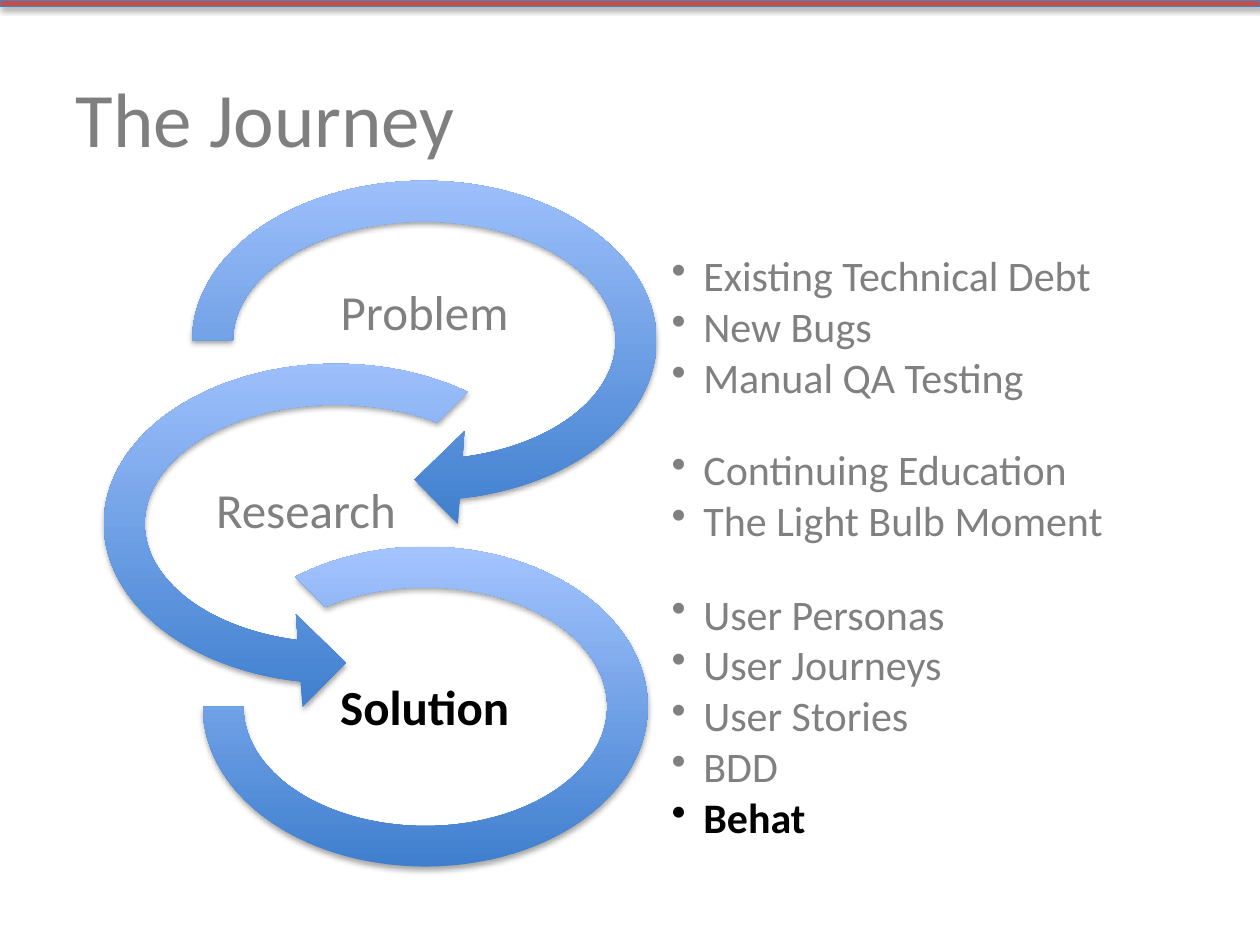
from lxml import etree
from pptx import Presentation
from pptx import util as u
from pptx.dml.color import RGBColor
from pptx.enum import shapes, text
from pptx.oxml import parse_xml
from pptx.oxml.ns import nsdecls, qn

GREY, BLACK = "808080", "000000"
FORM = shapes.MSO_SHAPE


def style(run, size, tone, bold=False):
    run.font.name = "Calibri"
    run.font.size = u.Pt(size)
    run.font.bold = bold
    run.font.color.rgb = RGBColor.from_string(tone)


def shade(shape):
    shape.shadow.inherit = False
    shape._element.spPr.find(qn("a:effectLst")).append(parse_xml(
        f'<a:outerShdw {nsdecls("a")} blurRad="40000" dist="23000" dir="5400000" '
        'rotWithShape="0"><a:srgbClr val="000000"><a:alpha val="35000"/>'
        '</a:srgbClr></a:outerShdw>'))


deck = Presentation()
deck.slide_width, deck.slide_height = u.Cm(25.4), u.Cm(19.05)
slide = deck.slides.add_slide(deck.slide_layouts[5])

# Top bar
bar = slide.shapes.add_shape(FORM.RECTANGLE, 0, 0, u.Cm(25.4), u.Cm(0.13))
bar.fill.solid()
bar.fill.fore_color.rgb = RGBColor.from_string("C0504D")
bar.line.color.rgb = RGBColor.from_string("4B7EBC")
bar.line.width = u.Pt(0.75)
shade(bar)

# Title
title = slide.shapes.title
title.left, title.top = u.Cm(1.27), u.Cm(0.76)
title.width, title.height = u.Cm(22.86), u.Cm(3.18)
title.text_frame.vertical_anchor = text.MSO_ANCHOR.MIDDLE
para = title.text_frame.paragraphs[0]
para.alignment = text.PP_ALIGN.LEFT
run = para.add_run()
run.text = "The Journey"
style(run, 44, "7F7F7F")

# Stages: arrow form, its box and adjustments, label and its place, list top, points
stages = [
    (FORM.CIRCULAR_ARROW, (3.35, 3.12, 10.41, 7.49), (0.11, 11.423, 45, 108, 0.125),
     "Problem", (6.02, 5.46), 4.14,
     ["Existing Technical Debt", "New Bugs", "Manual QA Testing"]),
    (FORM.LEFT_CIRCULAR_ARROW, (1.57, 6.81, 10.41, 7.49), (0.11, 11.423, 63, 189, 0.125),
     "Research", (3.63, 9.45), 7.54,
     ["Continuing Education", "The Light Bulb Moment"]),
    (FORM.BLOCK_ARC, (4.09, 11.02, 8.97, 6.45), (135, 108, 0.127),
     "Solution", (6.02, 13.41), 11.99,
     ["User Personas", "User Journeys", "User Stories", "BDD", "Behat"]),
]
strong = {"Solution", "Behat"}

for form, box, turns, label, place, top, points in stages:
    # Curved arrow
    arrow = slide.shapes.add_shape(form, *[u.Cm(n) for n in box])
    for i, turn in enumerate(turns):
        arrow.adjustments[i] = turn
    arrow.fill.gradient()
    arrow.fill.gradient_angle = 90
    for stop, tone, spot in zip(arrow.fill.gradient_stops, ("3F7FCE", "A4C4FF"), (0, 1)):
        stop.color.rgb = RGBColor.from_string(tone)
        stop.position = spot
    arrow.line.fill.background()
    shade(arrow)

    # Bullet list, then stage label
    for area, lines, size, gap, listed in (
            ((13.49, top, 10.64, 4.98), points, 24, 3.2, True),
            ((*place, 5.08, 1.78), [label], 28, 7.5, False)):
        frame = slide.shapes.add_textbox(*[u.Cm(n) for n in area]).text_frame
        frame.word_wrap = True
        frame.vertical_anchor = text.MSO_ANCHOR.MIDDLE
        frame.margin_left = frame.margin_right = u.Cm(0.05)
        frame.margin_top = frame.margin_bottom = u.Cm(0.05)
        for i, line in enumerate(lines):
            para = frame.add_paragraph() if i else frame.paragraphs[0]
            para.line_spacing = 0.9
            para.space_after = u.Pt(gap)
            if listed:
                para.level = 1
                props = para._p.get_or_add_pPr()
                props.set("marL", str(u.Cm(0.64)))
                props.set("indent", str(-u.Cm(0.64)))
                etree.SubElement(props, qn("a:buChar")).set("char", "•")
            else:
                para.alignment = text.PP_ALIGN.CENTER
            run = para.add_run()
            run.text = line
            bold = line in strong
            style(run, size, BLACK if bold else GREY, bold)

deck.save("out.pptx")
